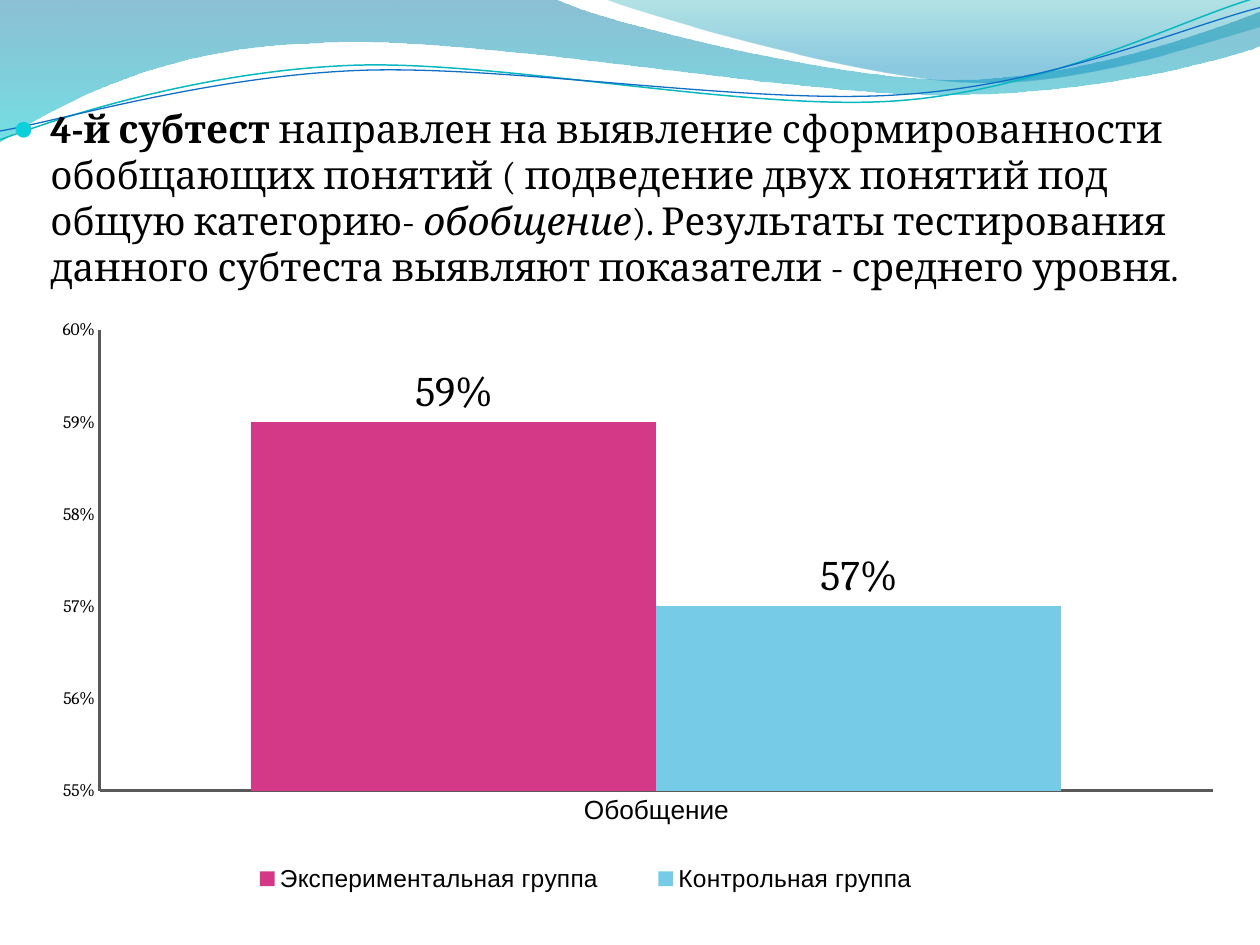
from lxml import etree
from pptx import Presentation
from pptx import util as u
from pptx.chart.data import CategoryChartData
from pptx.dml.color import RGBColor
from pptx.enum import chart as ch
from pptx.enum import text
from pptx.oxml import parse_xml
from pptx.oxml.ns import nsdecls, qn

SERIF, SANS = "Cambria", "Arial"

# Wave outlines in inches: two numbers are a line, six are a Bezier curve
BACK_WAVE = [(0, 0), (4.4, -0.01), (4.76, 0.17, 6.64, 0.63, 7.58, 0.63),
             (8.53, 0.63, 9.58, 0.26, 10, 0.09), (10.01, 0.36),
             (9.83, 0.44, 8.7, 0.76, 7.46, 0.75),
             (6.22, 0.75, 3.82, 0.28, 2.57, 0.34),
             (1.29, 0.36, 0.46, 0.83, -0.01, 1.13), (0, 0)]
FRONT_WAVE = [(4.79, -0.01), (5.09, 0.11, 6.82, 0.62, 7.69, 0.65),
              (8.56, 0.69, 9.61, 0.32, 10, 0.21), (10, 0), (4.79, -0.01)]
TEAL_LINE = [(0, 1.11), (0.48, 0.93, 1.58, 0.57, 2.77, 0.52),
             (3.95, 0.47, 5.93, 0.89, 7.13, 0.8),
             (8.33, 0.71, 9.38, 0.15, 9.98, -0.02)]
BLUE_LINE = [(0, 1.04), (0.47, 0.96, 1.64, 0.61, 2.83, 0.56),
             (4.03, 0.51, 5.97, 0.84, 7.17, 0.75),
             (8.36, 0.67, 9.41, 0.21, 10, 0.06)]

BODY_RUNS = [
    ("4-й субтест ", True, False),
    ("направлен на выявление сформированности обобщающих понятий "
     "( подведение двух понятий под общую категорию- ", False, False),
    ("обобщение", False, True),
    ("). Результаты тестирования данного субтеста выявляют показатели "
     "- среднего уровня.", False, False),
]
SERIES = [("Экспериментальная группа", 0.59, "D33986"),
          ("Контрольная группа", 0.57, "76CBE6")]


def color(value):
    return RGBColor.from_string(value)


def style_font(font, size, name, value="000000"):
    font.size, font.name = u.Pt(size), name
    font.color.rgb = color(value)


def add_outline(slide, outline, close):
    """Build a freeform through the end points, then bend its curved segments."""
    ends = [(u.Inches(segment[-2]), u.Inches(segment[-1])) for segment in outline]
    builder = slide.shapes.build_freeform(*ends[0])
    builder.add_line_segments(ends[1:], close=close)
    shape = builder.convert_to_shape()
    shape.shadow.inherit = False
    lines = list(shape.element.iter(qn("a:lnTo")))
    for line, segment in zip(lines, outline[1:]):
        if len(segment) == 2:
            continue
        curve = etree.Element(qn("a:cubicBezTo"))
        for x, y in zip(segment[::2], segment[1::2]):
            point = etree.SubElement(curve, qn("a:pt"))
            point.set("x", str(u.Inches(x) - shape.left))
            point.set("y", str(u.Inches(y) - shape.top))
        line.getparent().replace(line, curve)
    return shape


def add_wave(slide, outline, stops):
    """Add a wave with a downward gradient of (position, colour, opacity %)."""
    shape = add_outline(slide, outline, True)
    shape.line.fill.background()
    shape.fill.gradient()
    shape.fill.gradient_angle = 270
    for stop, (position, value, _) in zip(shape.fill.gradient_stops, stops):
        stop.position = position
        stop.color.rgb = color(value)
    for node, (_, _, opacity) in zip(shape.element.iter(qn("a:srgbClr")), stops):
        etree.SubElement(node, qn("a:alpha")).set("val", str(opacity * 1000))


def add_curve(slide, outline, value, width):
    shape = add_outline(slide, outline, False)
    shape.fill.background()
    shape.line.color.rgb = color(value)
    shape.line.width = u.Pt(width)


def fill_body(slide, body):
    body.left, body.top = u.Inches(0), u.Inches(0.78)
    body.width, body.height = u.Inches(10), u.Inches(6.72)
    frame = body.text_frame
    frame.word_wrap = True
    frame.auto_size = text.MSO_AUTO_SIZE.NONE
    frame.vertical_anchor = text.MSO_ANCHOR.TOP
    paragraph = frame.paragraphs[0]
    for words, bold, italic in BODY_RUNS:
        run = paragraph.add_run()
        run.text = words
        style_font(run.font, 22, SERIF)
        run.font.bold, run.font.italic = bold, italic
    # Hanging bullet
    properties = paragraph._p.get_or_add_pPr()
    properties.set("marL", str(u.Inches(0.3)))
    properties.set("indent", str(u.Inches(-0.3)))
    for xml in ('<a:spcBef {}><a:spcPct val="20000"/></a:spcBef>',
                '<a:buClr {}><a:srgbClr val="0BD0D9"/></a:buClr>',
                '<a:buSzPct {} val="95000"/>',
                '<a:buFont {} typeface="Arial"/>',
                '<a:buChar {} char="●"/>'):
        properties.append(parse_xml(xml.format(nsdecls("a"))))
    # Keep the text in front of the waves
    slide.shapes.element.append(body.element)


def manual_layout(parent, before, x, y, width, height, inner=False):
    """Place a chart part by fractions of the chart area."""
    for old in parent.findall(qn("c:layout")):
        parent.remove(old)
    layout = etree.Element(qn("c:layout"))
    manual = etree.SubElement(layout, qn("c:manualLayout"))
    values = [("layoutTarget", "inner")] if inner else []
    values += [("xMode", "edge"), ("yMode", "edge"),
               ("x", x), ("y", y), ("w", width), ("h", height)]
    for tag, value in values:
        etree.SubElement(manual, qn("c:" + tag)).set("val", str(value))
    if before is None:
        parent.insert(0, layout)
    else:
        parent.find(qn(before)).addnext(layout)


def add_column_chart(slide):
    data = CategoryChartData(number_format="0%")
    data.categories = ["Обобщение"]
    for name, value, _ in SERIES:
        data.add_series(name, [value])
    chart = slide.shapes.add_chart(
        ch.XL_CHART_TYPE.COLUMN_CLUSTERED, u.Inches(0), u.Inches(2.5),
        u.Inches(10), u.Inches(5), data).chart
    chart.has_title = False
    style_font(chart.font, 10, SERIF)
    # Columns and their labels
    plot = chart.plots[0]
    plot.vary_by_categories = False
    plot.gap_width, plot.overlap = 75, 0
    for series, (_, _, value) in zip(plot.series, SERIES):
        series.format.fill.solid()
        series.format.fill.fore_color.rgb = color(value)
        labels = series.data_labels
        labels.show_value = True
        labels.number_format, labels.number_format_is_linked = "0%", False
        labels.position = ch.XL_LABEL_POSITION.OUTSIDE_END
        style_font(labels.font, 24, SERIF)
    # Axes
    for axis, size, name in ((chart.category_axis, 15, SANS),
                             (chart.value_axis, 10, SERIF)):
        axis.has_major_gridlines = False
        axis.major_tick_mark = axis.minor_tick_mark = ch.XL_TICK_MARK.NONE
        axis.format.line.color.rgb = color("595959")
        axis.format.line.width = u.Pt(1.25)
        style_font(axis.tick_labels.font, size, name)
    scale = chart.value_axis
    scale.minimum_scale, scale.maximum_scale, scale.major_unit = 0.55, 0.6, 0.01
    scale.tick_labels.number_format = "0%"
    scale.tick_labels.number_format_is_linked = False
    # Legend and placement
    chart.has_legend = True
    legend = chart.legend
    legend.position = ch.XL_LEGEND_POSITION.BOTTOM
    legend.include_in_layout = False
    style_font(legend.font, 14, SANS)
    chart_space = chart.element
    manual_layout(chart_space.find(".//" + qn("c:plotArea")), None,
                  0.079, 0.024, 0.884, 0.731, inner=True)
    manual_layout(chart_space.find(".//" + qn("c:legend")), "c:legendPos",
                  0.165, 0.85, 0.6, 0.09)


def main():
    presentation = Presentation()
    presentation.slide_width, presentation.slide_height = u.Inches(10), u.Inches(7.5)
    slide = presentation.slides.add_slide(presentation.slide_layouts[1])
    title, body = slide.placeholders
    title.element.getparent().remove(title.element)
    # Decorative waves
    add_wave(slide, BACK_WAVE, [(0, "0074A1", 45), (1, "00C6CF", 55)])
    add_wave(slide, FRONT_WAVE, [(0, "00A1A9", 30), (0.8, "008BBF", 45)])
    add_curve(slide, TEAL_LINE, "0AB8BF", 0.85)
    add_curve(slide, BLUE_LINE, "0F6FC6", 0.75)
    # Content
    fill_body(slide, body)
    add_column_chart(slide)
    presentation.save("out.pptx")


if __name__ == "__main__":
    main()
